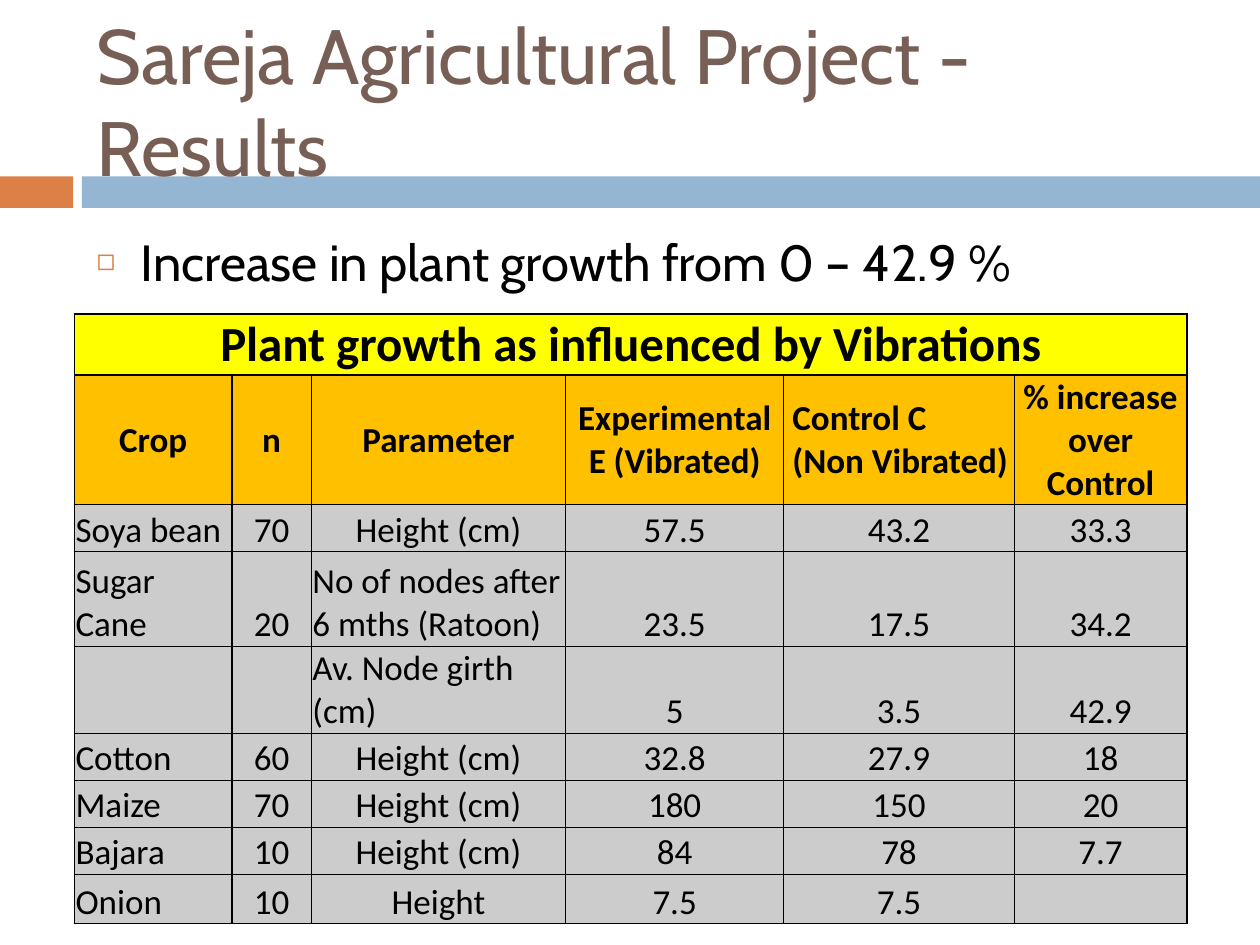
"""Build the plant growth results slide with its heading, bullet and table."""
from dataclasses import dataclass

import lxml.etree
import pptx
import pptx.dml.color
import pptx.enum.shapes
import pptx.enum.text
import pptx.oxml.ns
import pptx.util

Pt = pptx.util.Pt
qn = pptx.oxml.ns.qn
Align = pptx.enum.text.PP_ALIGN
Anchor = pptx.enum.text.MSO_ANCHOR

BLACK = "000000"
ORANGE = "DD8047"
COLUMN_WIDTHS = [90, 45.4, 145.4, 124.6, 131.8, 98.6]
ROW_HEIGHTS = [28, 55.4, 26.9, 54, 26.9, 26.9, 26.9, 26.9, 28.2]
TABLE_TITLE = "Plant growth as influenced by Vibrations"
HEADERS = ["Crop", "n", "Parameter", "Experimental E (Vibrated)",
           "Control C\v(Non Vibrated)", "% increase over Control"]
RESULTS = [
    ["Soya bean", "70", "Height (cm)", "57.5", "43.2", "33.3"],
    ["Sugar Cane", "20", "No of nodes after 6 mths (Ratoon)", "23.5", "17.5", "34.2"],
    ["", "", "Av. Node girth (cm)", "5", "3.5", "42.9"],
    ["Cotton", "60", "Height (cm)", "32.8", "27.9", "18"],
    ["Maize", "70", "Height (cm)", "180", "150", "20"],
    ["Bajara", "10", "Height (cm)", "84", "78", "7.7"],
    ["Onion", "10", "Height", "7.5", "7.5", ""],
]


@dataclass
class Bar:
    """A coloured stretch of the band below the title."""
    left: float
    width: float
    colour: str


@dataclass
class CellStyle:
    """The look shared by the cells of one table band."""
    fill: str
    size: float
    bold: bool
    anchor: Anchor


TITLE_STYLE = CellStyle("FFFF00", 28, True, Anchor.BOTTOM)
HEADER_STYLE = CellStyle("FFC000", 20, True, Anchor.MIDDLE)
RESULT_STYLE = CellStyle("CCCCCC", 20, False, Anchor.BOTTOM)
BARS = [Bar(0, 41.8, ORANGE), Bar(46.8, 673.2, "94B6D2")]


def rgb(colour: str) -> pptx.dml.color.RGBColor:
    """Turn a hex string into a colour."""
    return pptx.dml.color.RGBColor.from_string(colour)


def set_font(paragraph, name: str, size: float, colour: str, bold: bool = False) -> None:
    """Set the font of a whole paragraph."""
    font = paragraph.font
    font.name, font.size, font.bold = name, Pt(size), bold
    font.color.rgb = rgb(colour)


def place(shape, left: float, top: float, width: float, height: float) -> None:
    """Move and size a shape."""
    shape.left, shape.top = Pt(left), Pt(top)
    shape.width, shape.height = Pt(width), Pt(height)


def add_bar(page, bar: Bar) -> None:
    """Draw one bar behind the title."""
    box = page.shapes.add_shape(pptx.enum.shapes.MSO_SHAPE.RECTANGLE,
                                Pt(bar.left), Pt(100.8), Pt(bar.width), Pt(18))
    box.shadow.inherit = False
    box.fill.solid()
    box.fill.fore_color.rgb = rgb(bar.colour)
    box.line.fill.background()
    page.shapes.title.element.addprevious(box.element)


def fill_placeholder(box, text: str, size: float, colour: str, anchor: Anchor):
    """Write one left-aligned paragraph into a placeholder and return it."""
    frame = box.text_frame
    frame.word_wrap = True
    frame.auto_size = pptx.enum.text.MSO_AUTO_SIZE.NONE
    frame.vertical_anchor = anchor
    para = frame.paragraphs[0]
    para.text = text
    para.alignment = Align.LEFT
    set_font(para, "Cabin", size, colour)
    return para


def add_bullet(box) -> None:
    """Give the first paragraph of a box a small square bullet."""
    properties = box.element.txBody.p_lst[0].get_or_add_pPr()
    properties.set("marL", str(Pt(25.2)))
    properties.set("indent", str(-Pt(25.2)))
    colour = lxml.etree.Element(qn("a:buClr"))
    lxml.etree.SubElement(colour, qn("a:srgbClr"), val=ORANGE)
    size = lxml.etree.Element(qn("a:buSzPct"), val="60000")
    symbol = lxml.etree.Element(qn("a:buChar"), char="◻")
    defaults = properties.find(qn("a:defRPr"))
    for part in (colour, size, symbol):
        defaults.addprevious(part)


def add_borders(cell_element, row: int) -> None:
    """Line a cell, with thin rules between the result rows."""
    top = 1 if row <= 2 else 0.5
    bottom = 1 if row <= 1 or row == len(ROW_HEIGHTS) - 1 else 0.5
    properties = cell_element.get_or_add_tcPr()
    for side, width in (("L", 1), ("R", 1), ("T", top), ("B", bottom)):
        line = lxml.etree.SubElement(properties, qn(f"a:ln{side}"), w=str(Pt(width)))
        solid = lxml.etree.SubElement(line, qn("a:solidFill"))
        lxml.etree.SubElement(solid, qn("a:srgbClr"), val=BLACK)


def write_cell(cell, text: str, style: CellStyle, align: Align, left_margin: float) -> None:
    """Fill and write one table cell."""
    cell.fill.solid()
    cell.fill.fore_color.rgb = rgb(style.fill)
    cell.vertical_anchor = style.anchor
    cell.margin_left = Pt(left_margin)
    cell.margin_right = cell.margin_top = Pt(0.7)
    cell.margin_bottom = 0
    para = cell.text_frame.paragraphs[0]
    para.text = text
    para.alignment = align
    set_font(para, "Calibri", style.size, BLACK, style.bold)


def add_results_table(page) -> None:
    """Add the table of crops and measured growth."""
    rows = [[TITLE_STYLE, [TABLE_TITLE] + [""] * 5], [HEADER_STYLE, HEADERS]]
    rows += [[RESULT_STYLE, result] for result in RESULTS]
    frame = page.shapes.add_table(len(rows), len(COLUMN_WIDTHS),
                                  Pt(42.5), Pt(179.3), Pt(635.8), Pt(345.6))
    table = frame.table
    table.first_row = table.horz_banding = False
    for column, width in zip(table.columns, COLUMN_WIDTHS):
        column.width = Pt(width)
    for table_row, height in zip(table.rows, ROW_HEIGHTS):
        table_row.height = Pt(height)
    elements = frame.element.iter(qn("a:tc"))
    for row, (style, texts) in enumerate(rows):
        for column, text in enumerate(texts):
            add_borders(next(elements), row)
            broken = "\v" in text
            is_result = style is RESULT_STYLE
            starts_left = is_result and (column == 0 or (column == 2 and len(text) > 12))
            align = Align.LEFT if broken or starts_left else Align.CENTER
            write_cell(table.cell(row, column), text, style, align, 5 if broken else 0.7)
    table.cell(0, 0).merge(table.cell(0, len(COLUMN_WIDTHS) - 1))
    frame.height = Pt(345.6)


def main() -> None:
    """Build the slide and save it."""
    deck = pptx.Presentation()
    deck.slide_width, deck.slide_height = Pt(720), Pt(540)
    page = deck.slides.add_slide(deck.slide_layouts[1])
    for bar in BARS:
        add_bar(page, bar)
    title, body = page.shapes.title, page.placeholders[1]
    place(title, 48, 18, 642, 78)
    fill_placeholder(title, "Sareja Agricultural Project - Results", 44, "775F55", Anchor.MIDDLE)
    place(body, 48, 128, 642, 53)
    para = fill_placeholder(body, "Increase in plant growth from 0 – 42.9 %", 29, BLACK, Anchor.TOP)
    para.space_before = Pt(7)
    add_bullet(body)
    add_results_table(page)
    deck.save("out.pptx")


if __name__ == "__main__":
    main()
